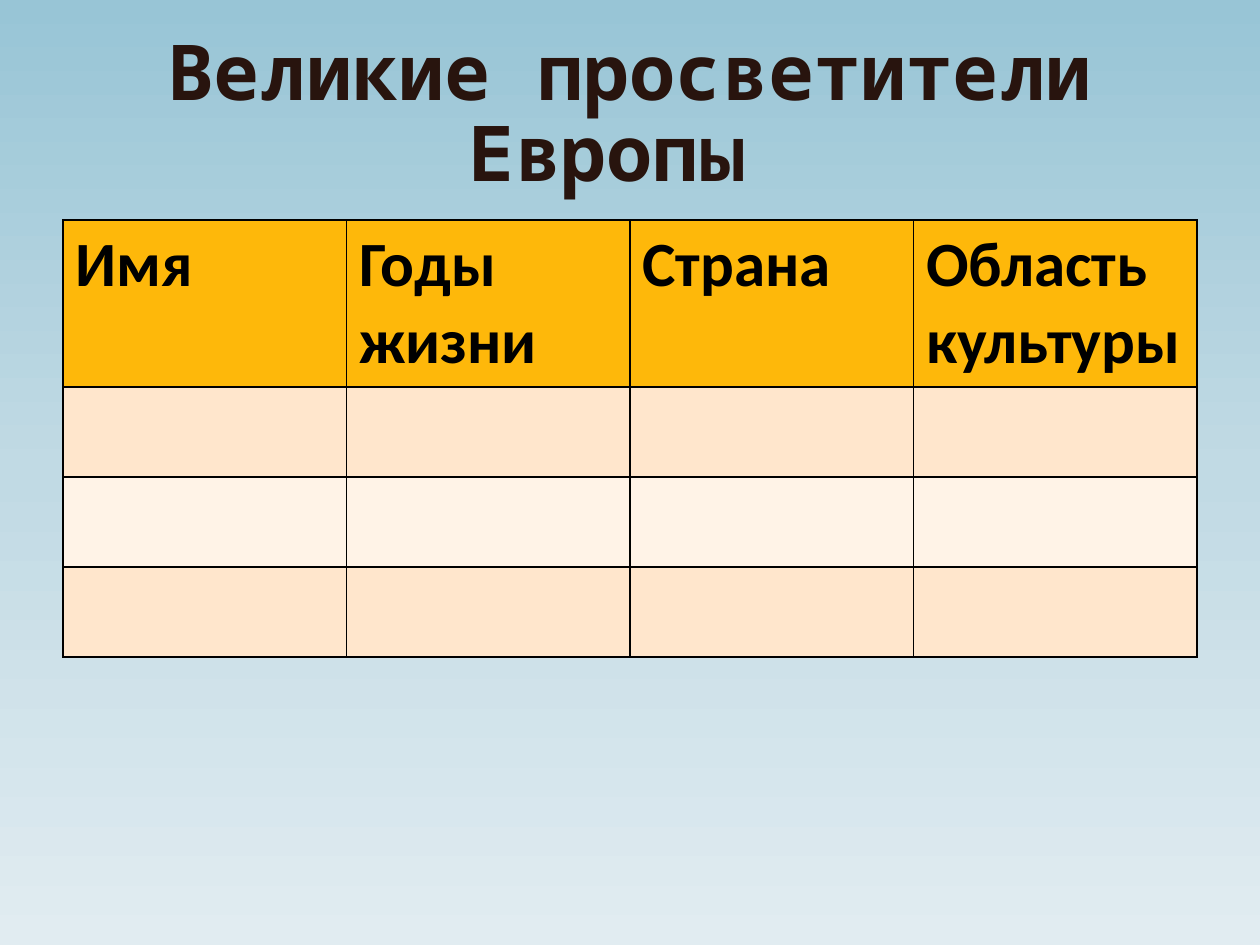
from copy import deepcopy

from pptx import Presentation
from pptx import util as u
from pptx.dml.color import RGBColor
from pptx.enum import text
from pptx.oxml import ns
from lxml import etree

PX = 914400 / 126
SKY = [RGBColor(0x98, 0xC5, 0xD6), RGBColor(0xC1, 0xDA, 0xE4), RGBColor(0xE1, 0xEC, 0xF1)]
BROWN = RGBColor(0x28, 0x14, 0x0E)
BLACK = RGBColor(0, 0, 0)
AMBER = RGBColor(0xFE, 0xB8, 0x0A)
BANDS = [RGBColor(0xFF, 0xE6, 0xCC), RGBColor(0xFF, 0xF3, 0xE7)]

HEADERS = ["Имя", "Годы жизни", "Страна", "Область культуры"]
ROW_HEIGHTS = [167, 90, 90, 90]
COL_WIDTH = 1134 / len(HEADERS)


def px(n):
    return u.Emu(round(n * PX))


def set_background(s):
    fill = s.background.fill
    fill.gradient()
    fill.gradient_angle = 270
    # The default gradient has two stops; add one in the middle
    stops = s._element.find(".//" + ns.qn("a:gsLst"))
    stops.insert(1, deepcopy(stops[0]))
    for i, (stop, color) in enumerate(zip(fill.gradient_stops, SKY)):
        stop.position = i / 2
        stop.color.rgb = color


def format_run(r, font, size, color):
    r.font.name = font
    r.font.size = u.Pt(size)
    r.font.bold = True
    r.font.color.rgb = color


def add_title(s, title):
    sp = s.shapes.title
    sp.left, sp.top, sp.width, sp.height = px(63), px(38), px(1134), px(157)
    tf = sp.text_frame
    tf.text = title
    tf.word_wrap = True
    tf.auto_size = text.MSO_AUTO_SIZE.NONE
    tf.vertical_anchor = text.MSO_ANCHOR.MIDDLE
    p = tf.paragraphs[0]
    p.alignment = text.PP_ALIGN.CENTER
    p.line_spacing = 0.88
    format_run(p.runs[0], "Noto Sans Mono", 44, BROWN)


def set_borders(cell):
    props = cell._tc.get_or_add_tcPr()
    for i, side in enumerate(("lnL", "lnR", "lnT", "lnB")):
        line = etree.Element(ns.qn("a:" + side), w=str(u.Pt(1)))
        solid = etree.SubElement(line, ns.qn("a:solidFill"))
        etree.SubElement(solid, ns.qn("a:srgbClr"), val=str(BLACK))
        props.insert(i, line)


def add_table(s):
    table = s.shapes.add_table(len(ROW_HEIGHTS), len(HEADERS), px(63), px(220),
                               px(1134), px(sum(ROW_HEIGHTS))).table
    for col in table.columns:
        col.width = px(COL_WIDTH)
    for i, height in enumerate(ROW_HEIGHTS):
        table.rows[i].height = px(height)
        for cell in table.rows[i].cells:
            cell.fill.solid()
            cell.fill.fore_color.rgb = BANDS[(i - 1) % 2] if i else AMBER
            set_borders(cell)
    for cell, header in zip(table.rows[0].cells, HEADERS):
        cell.text_frame.text = header
        format_run(cell.text_frame.paragraphs[0].runs[0], "Calibri", 36, BLACK)


def main():
    prs = Presentation()
    prs.slide_width, prs.slide_height = px(1260), px(945)
    s = prs.slides.add_slide(prs.slide_layouts[5])
    set_background(s)
    add_title(s, "Великие просветители Европы ")
    add_table(s)
    prs.save("out.pptx")


if __name__ == "__main__":
    main()
